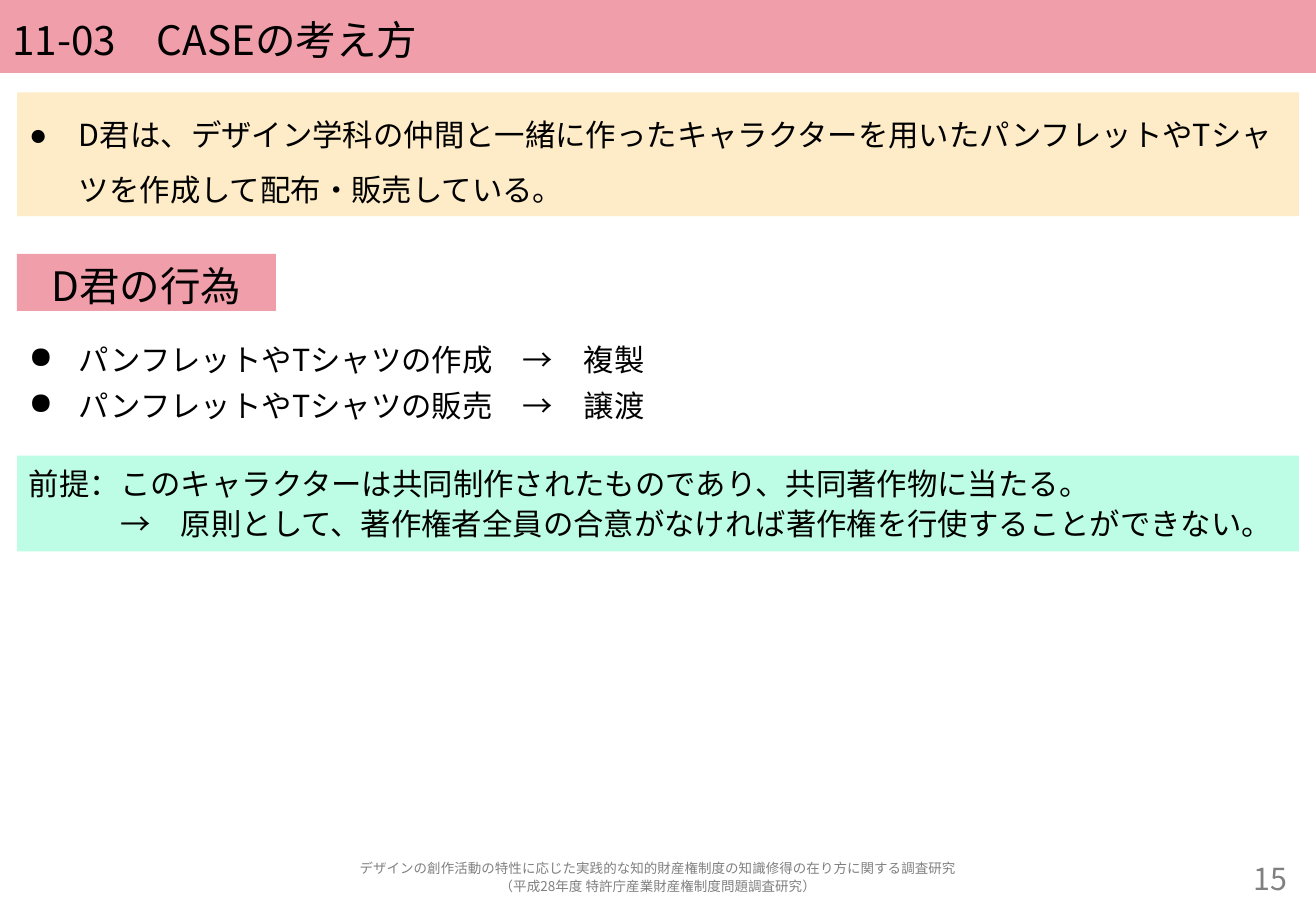
from lxml.etree import SubElement
from pptx import Presentation
from pptx.dml.color import RGBColor
from pptx.enum.shapes import MSO_SHAPE
from pptx.enum.text import MSO_ANCHOR, MSO_AUTO_SIZE, PP_ALIGN
from pptx.oxml.ns import qn
from pptx.util import Pt

PX = 9144
FONT = "Noto Sans CJK JP"
PINK, CREAM, MINT = "F09FAA", "FDECC7", "BDFDE5"
BLACK, GRAY = "000000", "808080"
LEFT, WIDTH = 14, 1055


def place(shape, left, top, width, height, fill=None):
    shape.left, shape.top = left * PX, top * PX
    shape.width, shape.height = width * PX, height * PX
    if fill:
        shape.fill.solid()
        shape.fill.fore_color.rgb = RGBColor.from_string(fill)
        shape.line.fill.background()


def write(shape, lines, size, color=BLACK, align=PP_ALIGN.LEFT,
          anchor=MSO_ANCHOR.MIDDLE, spacing=1.1, bullet=False, margins=(0, 0)):
    frame = shape.text_frame
    frame.word_wrap = True
    frame.auto_size = MSO_AUTO_SIZE.NONE
    frame.vertical_anchor = anchor
    frame.text = "\n".join(lines)
    for paragraph, margin in zip(frame.paragraphs, margins):
        paragraph.alignment = align
        paragraph.line_spacing = spacing
        paragraph.space_before = Pt(3.6 if bullet else 0)
        paragraph.font.size = Pt(size)
        paragraph.font.name = FONT
        paragraph.font.color.rgb = RGBColor.from_string(color)
        properties = paragraph._p.get_or_add_pPr()
        properties.set("marL", str((41 if bullet else margin) * PX))
        properties.set("indent", str(-41 * PX if bullet else 0))
        if bullet:
            mark = SubElement(properties, qn("a:buChar"))
            mark.set("char", "●")
            properties.remove(mark)
            properties.find(qn("a:defRPr")).addprevious(mark)
        for run in paragraph.runs:
            SubElement(run._r.get_or_add_rPr(), qn("a:ea")).set("typeface", FONT)


presentation = Presentation()
presentation.slide_width = 1083 * PX
presentation.slide_height = 750 * PX
slide = presentation.slides.add_slide(presentation.slide_layouts[1])
shapes = slide.shapes

title = shapes.title
place(title, 0, 0, 1083, 60, PINK)
write(title, ["11-03　CASEの考え方"], 24)

case = slide.placeholders[1]
place(case, LEFT, 76, WIDTH, 102, CREAM)
write(case, ["D君は、デザイン学科の仲間と一緒に作ったキャラクターを用いたパンフレットやTシャツを作成して配布・販売している。"],
      18, anchor=MSO_ANCHOR.TOP, spacing=1.5, bullet=True)

page_number = shapes.add_textbox(0, 0, 0, 0)
place(page_number, 935, 706, 134, 31)
write(page_number, ["15"], 18, GRAY, PP_ALIGN.RIGHT)

heading = shapes.add_shape(MSO_SHAPE.RECTANGLE, 0, 0, 0, 0)
heading.shadow.inherit = False
place(heading, LEFT, 209, 213, 47, PINK)
write(heading, ["D君の行為"], 24, align=PP_ALIGN.CENTER)

actions = shapes.add_textbox(0, 0, 0, 0)
place(actions, LEFT, 273, WIDTH, 87)
write(actions, ["パンフレットやTシャツの作成　→　複製", "パンフレットやTシャツの販売　→　譲渡"],
      18, anchor=MSO_ANCHOR.TOP, bullet=True)

premise = shapes.add_shape(MSO_SHAPE.RECTANGLE, 0, 0, 0, 0)
premise.shadow.inherit = False
place(premise, LEFT, 375, WIDTH, 79, MINT)
write(premise, ["前提：このキャラクターは共同制作されたものであり、共同著作物に当たる。",
                "→　原則として、著作権者全員の合意がなければ著作権を行使することができない。"],
      18, anchor=MSO_ANCHOR.TOP, margins=(0, 75))

footer = shapes.add_textbox(0, 0, 0, 0)
place(footer, LEFT, 706, WIDTH, 31)
write(footer, ["デザインの創作活動の特性に応じた実践的な知的財産権制度の知識修得の在り方に関する調査研究",
               "（平成28年度 特許庁産業財産権制度問題調査研究）"],
      8, GRAY, PP_ALIGN.CENTER)

presentation.save("out.pptx")
